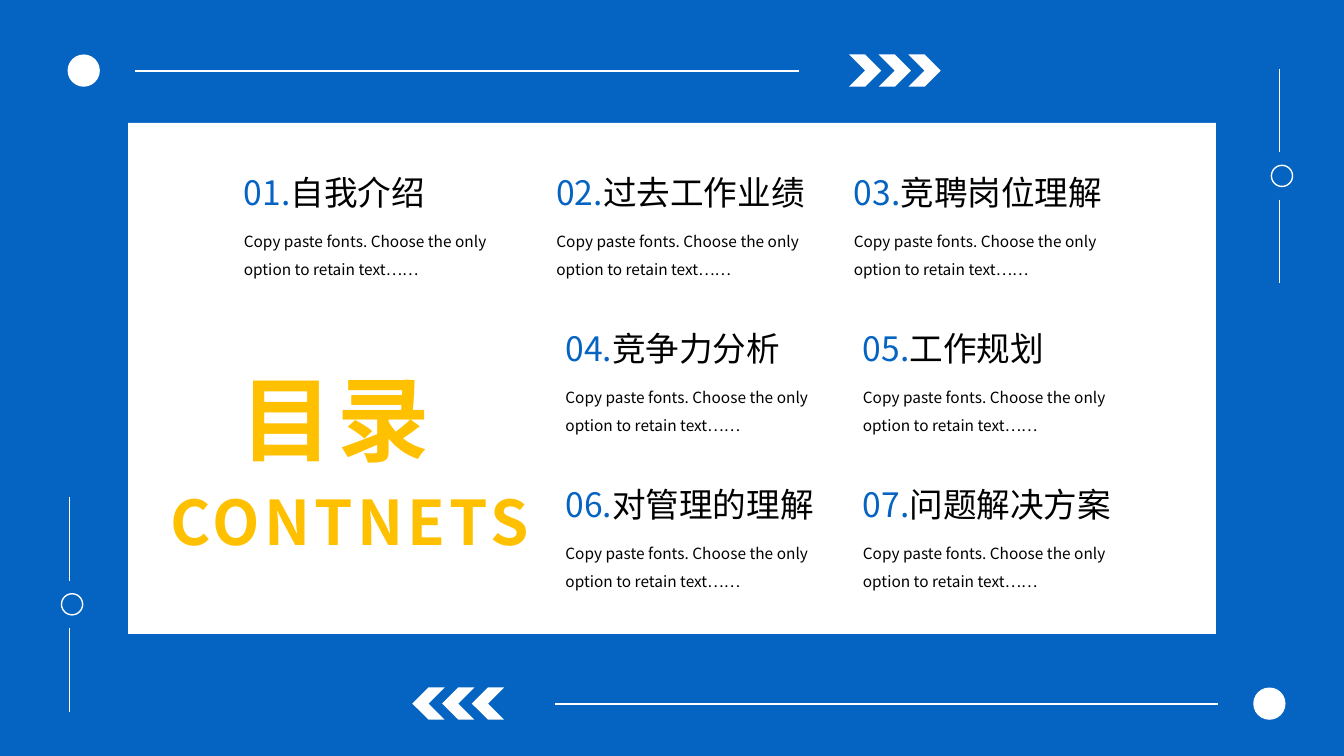
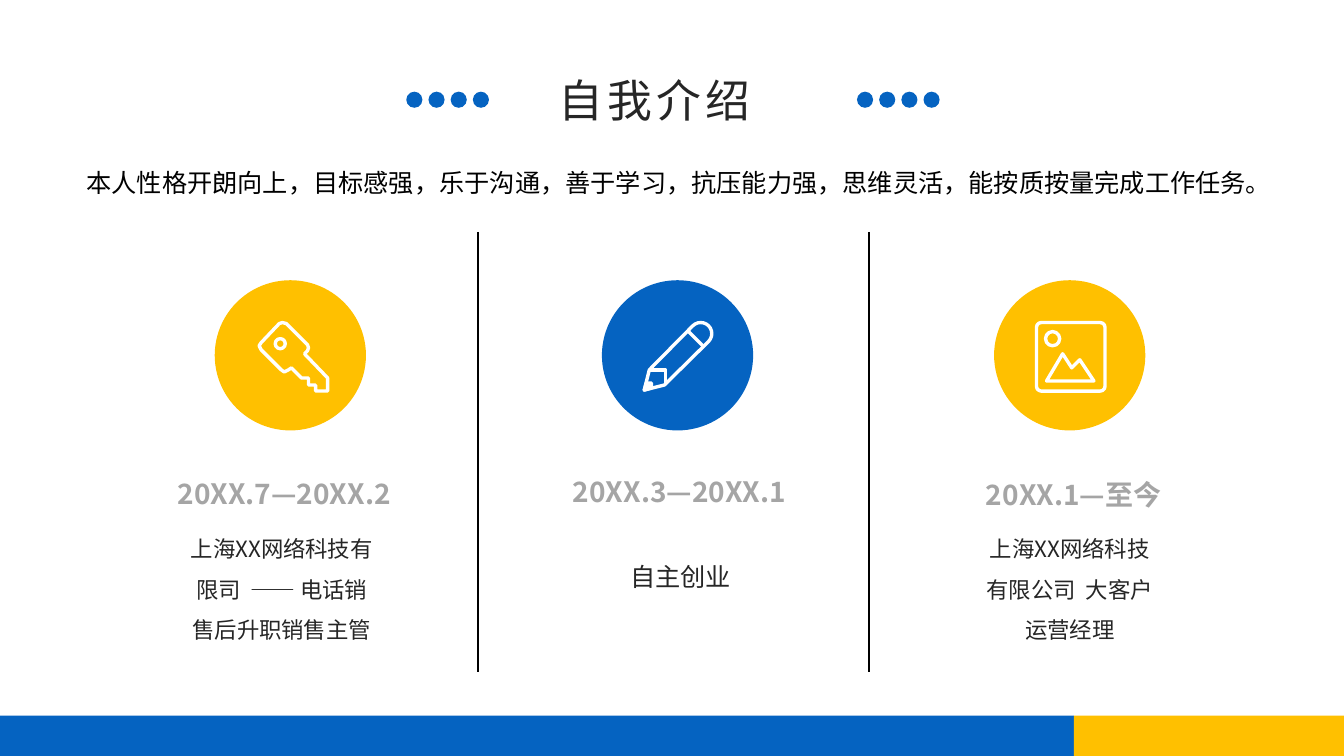
from math import cos, radians, sin
from lxml.etree import SubElement
from pptx import Presentation
from pptx.dml.color import RGBColor
from pptx.enum.shapes import MSO_CONNECTOR, MSO_SHAPE
from pptx.enum.text import MSO_ANCHOR, MSO_AUTO_SIZE, PP_ALIGN
from pptx.oxml.ns import qn
from pptx.util import Inches, Pt

# Shared style
BLUE, GOLD, WHITE = "0563C1", "FFC000", "FFFFFF"
BLACK, DARK, GREY = "000000", "262626", "A5A5A5"
FONT = "Noto Sans CJK SC"
WIDE, HIGH = 13.33, 7.5
BANDS = [(0, 10.65, BLUE), (10.65, 2.69, GOLD)]
OVAL, RECT = MSO_SHAPE.OVAL, MSO_SHAPE.RECTANGLE

# Contents slide: number, topic, left, row
TOPICS = [
    ("01.", "自我介绍", 2.32, 0),
    ("02.", "过去工作业绩", 5.42, 0),
    ("03.", "竞聘岗位理解", 8.37, 0),
    ("04.", "竞争力分析", 5.51, 1),
    ("05.", "工作规划", 8.46, 1),
    ("06.", "对管理的理解", 5.51, 2),
    ("07.", "问题解决方案", 8.46, 2),
]
BLURB = "Copy paste fonts. Choose the only option to retain text……"

# Profile slide
INTRO = ("本人性格开朗向上，目标感强，乐于沟通，善于学习，抗压能力强，"
         "思维灵活，能按质按量完成工作任务。")
JOBS = [
    dict(disc=2.13, fill=GOLD, date="20XX.7—20XX.2", when=(1.09, 4.68, 3.46, 0.44),
         work="上海XX网络科技有限司  —— 电话销售后升职销售主管",
         spot=(1.76, 5.13, 2.07, 1.31), size=16),
    dict(disc=5.97, fill=BLUE, date="20XX.3—20XX.1", when=(4.94, 4.66, 3.6, 0.44),
         work="自主创业", spot=(5.89, 5.37, 1.72, 0.5), size=18),
    dict(disc=9.86, fill=GOLD, date="20XX.1—至今", when=(8.92, 4.69, 3.46, 0.44),
         work="上海XX网络科技有限公司  大客户运营经理",
         spot=(9.65, 5.13, 1.92, 1.31), size=16),
]

# Icon outlines
KEY = [(2.77, 3.21), (2.8, 3.2), (2.84, 3.21), (3.05, 3.42), (3.06, 3.45), (3.05, 3.48),
       (3.02, 3.51), (3.25, 3.75), (3.25, 3.88), (3.13, 3.88), (3.13, 3.82),
       (3.06, 3.82), (3.06, 3.75), (2.99, 3.75), (2.89, 3.65), (2.86, 3.67),
       (2.82, 3.69), (2.79, 3.67), (2.59, 3.47), (2.57, 3.43), (2.59, 3.4)]
CAP = [(6.95 + 0.11 * cos(radians(a)), 3.31 + 0.11 * sin(radians(a)))
       for a in range(-135, 46, 15)]
PENCIL = [(6.39, 3.87), (6.44, 3.67)] + CAP + [(6.59, 3.82)]
TIP = [(6.39, 3.87), (6.41, 3.8), (6.46, 3.8), (6.46, 3.85)]
PEAKS = [(10.38, 3.78), (10.54, 3.51), (10.63, 3.65), (10.71, 3.57), (10.85, 3.78)]


def color(code):
    return RGBColor.from_string(code)


def box(at):
    return [Inches(v) for v in at]


def paint(shape, fill=None, line=None, width=1):
    shape.shadow.inherit = False
    if fill:
        shape.fill.solid()
        shape.fill.fore_color.rgb = color(fill)
    else:
        shape.fill.background()
    if line:
        shape.line.color.rgb = color(line)
        shape.line.width = Pt(width)
    else:
        shape.line.fill.background()
    return shape


def draw(slide, kind, at, fill=None, line=None, width=1):
    return paint(slide.shapes.add_shape(kind, *box(at)), fill, line, width)


def trace(slide, points, close=True, fill=None):
    spots = [box(p) for p in points]
    pen = slide.shapes.build_freeform(*spots[0], scale=1.0)
    pen.add_line_segments(spots[1:], close=close)
    return paint(pen.convert_to_shape(), fill, WHITE, 2.4)


def rule(slide, start, end, code, width):
    line = slide.shapes.add_connector(MSO_CONNECTOR.STRAIGHT, *box(start + end))
    line.line.color.rgb = color(code)
    line.line.width = Pt(width)
    SubElement(line.element.spPr, qn("a:effectLst"))


def write(slide, text, at, code=BLACK, size=18, bold=False, align=PP_ALIGN.LEFT,
          anchor=MSO_ANCHOR.TOP, space=None, track=0, inset=(0.1, 0.05), shape=None):
    """Text is one string, or a list of (string, colour) runs."""
    shape = shape or slide.shapes.add_textbox(*box(at))
    shape.left, shape.top, shape.width, shape.height = box(at)
    frame = shape.text_frame
    frame.word_wrap = True
    frame.auto_size = MSO_AUTO_SIZE.NONE
    frame.vertical_anchor = anchor
    frame.margin_left = frame.margin_right = Inches(inset[0])
    frame.margin_top = frame.margin_bottom = Inches(inset[1])
    para = frame.paragraphs[0]
    para.alignment = align
    if space:
        para.line_spacing = space
    for part, tint in [(text, code)] if isinstance(text, str) else text:
        run = para.add_run()
        run.text = part
        font = run.font
        font.size, font.bold, font.name = Pt(size), bold, FONT
        font.color.rgb = color(tint)
        props = run.font._element
        SubElement(props, qn("a:ea")).set("typeface", FONT)
        if track:
            props.set("spc", str(track * 100))


def title(slide, text, at, **look):
    shape = slide.shapes.title
    slide.shapes.element.append(shape.element)
    write(slide, text, at, shape=shape, track=3, **look)


def bands(deck, slide):
    """Draw the footer bands and move them to the master."""
    for i, (left, width, fill) in enumerate(BANDS):
        bar = draw(slide, RECT, (left, 7.1, width, 0.4), fill)
        bar.element.nvSpPr.cNvPr.set("id", str(100 + i))
        deck.slide_master.shapes.element.insert(2 + i, bar.element)


def trail(slide, flip):
    """Ball, line and three chevrons; flip turns them half round."""
    def turn(x, y=0.7):
        return (13.42 - x, 7.68 - y) if flip else (x, y)

    def mark(kind, mid):
        x, y = turn(mid)
        shape = draw(slide, kind, (x - 0.16, y - 0.16, 0.32, 0.32), WHITE)
        shape.rotation = 180 if flip else 0

    mark(OVAL, 0.83)
    rule(slide, turn(1.34), turn(7.92), WHITE, 1.5)
    for i in range(3):
        mark(MSO_SHAPE.CHEVRON, 8.58 + 0.295 * i)


def side(slide, x, top):
    """Two thin lines with a ring between them."""
    for y in (top, top + 1.3):
        rule(slide, (x, y), (x, y + 0.83), WHITE, 0.5)
    draw(slide, OVAL, (x - 0.08, top + 0.96, 0.21, 0.21), line=WHITE)


def contents(slide):
    draw(slide, RECT, (0, 0, WIDE, HIGH), BLUE)
    draw(slide, RECT, (1.27, 1.22, 10.79, 5.07), WHITE)
    for num, topic, left, row in TOPICS:
        top = 1.69 + 1.55 * row
        write(slide, BLURB, (left, top + 0.47, 2.8, 0.88), size=11, space=1.5)
        write(slide, [(num, BLUE), (topic, BLACK)], (left, top, 2.8, 0.46),
              size=24, space=1.2, anchor=MSO_ANCHOR.BOTTOM)
    title(slide, "目录", (2.29, 3.54, 2.29, 1.21), code=GOLD, size=66, bold=True)
    write(slide, "CONTNETS", (1.59, 4.75, 4.18, 0.84), GOLD, 44, bold=True, track=3)
    for flip in (False, True):
        trail(slide, flip)
    side(slide, 0.69, 4.93)
    side(slide, 12.69, 0.68)


def icons(slide):
    # Key
    trace(slide, KEY)
    draw(slide, OVAL, (2.73, 3.36, 0.1, 0.1), line=WHITE, width=2.4)
    # Pencil
    trace(slide, PENCIL)
    trace(slide, [(6.83, 3.29), (6.97, 3.43)], close=False)
    trace(slide, [(6.44, 3.67), (6.6, 3.67), (6.6, 3.82)], close=False)
    trace(slide, TIP, fill=WHITE)
    # Landscape
    frame = draw(slide, MSO_SHAPE.ROUNDED_RECTANGLE, (10.28, 3.2, 0.68, 0.68),
                 line=WHITE, width=2.4)
    frame.adjustments[0] = 0.07
    draw(slide, OVAL, (10.37, 3.29, 0.14, 0.14), line=WHITE, width=2.4)
    trace(slide, PEAKS)


def profile(slide):
    title(slide, "自我介绍", (5.54, 0.72, 2.29, 0.54), code=DARK, size=32, inset=(0, 0))
    for start in (4.03, 8.5):
        for i in range(4):
            draw(slide, OVAL, (start + 0.22 * i, 0.91, 0.16, 0.16), BLUE)
    write(slide, INTRO, (0.76, 1.52, 12.2, 0.46), space=1.3)
    for x in (4.74, 8.62):
        rule(slide, (x, 2.3), (x, 6.67), BLACK, 1)
    for job in JOBS:
        draw(slide, OVAL, (job["disc"], 2.78, 1.5, 1.49), job["fill"])
        write(slide, job["date"], job["when"], GREY, 20, bold=True, align=PP_ALIGN.CENTER)
        write(slide, job["work"], job["spot"], DARK, job["size"],
              align=PP_ALIGN.CENTER, space=1.5)
    icons(slide)


def main():
    deck = Presentation()
    deck.slide_width, deck.slide_height = box((WIDE, HIGH))
    pages = [deck.slides.add_slide(deck.slide_layouts[5]) for _ in range(2)]
    bands(deck, pages[0])
    contents(pages[0])
    profile(pages[1])
    deck.save("out.pptx")


if __name__ == "__main__":
    main()
